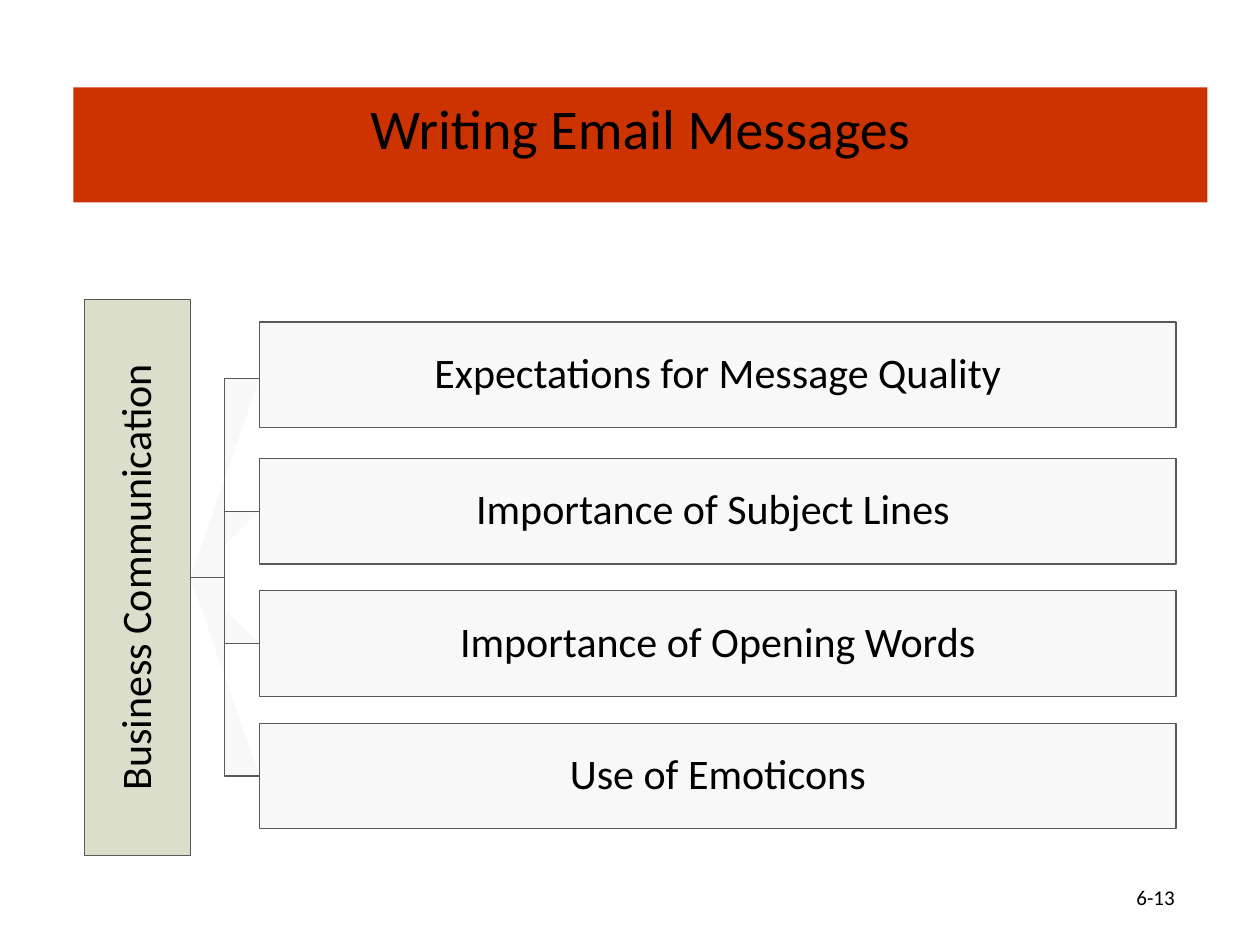
import pptx
import pptx.dml.color
import pptx.enum.shapes
import pptx.enum.text
import pptx.util

Cm = pptx.util.Cm
Pt = pptx.util.Pt
RGB = pptx.dml.color.RGBColor
Align = pptx.enum.text.PP_ALIGN
Anchor = pptx.enum.text.MSO_ANCHOR

RED = RGB(0xCC, 0x33, 0x00)
SAGE = RGB(0xDC, 0xDE, 0xCC)
PALE = RGB(0xF8, 0xF8, 0xF8)
GRAY = RGB(0x59, 0x59, 0x59)
BLACK = RGB(0, 0, 0)

TOPICS = [
    "Expectations for Message Quality",
    "Importance of Subject Lines ",
    "Importance of Opening Words",
    "Use of Emoticons",
]
MID, PITCH, THICK = 11.64, 2.67, 2.13
TRUNK, BEND, EDGE = 3.84, 4.53, 5.23


class Deck:
    font = "Calibri"
    inset = Cm(0.05)

    def __init__(self):
        self.prs = pptx.Presentation()
        self.prs.slide_width = Cm(25.4)
        self.prs.slide_height = Cm(19.05)
        self.slide = self.prs.slides.add_slide(self.prs.slide_layouts[5])

    def apply(self, item, values):
        for name, value in values.items():
            setattr(item, name, value)

    def place(self, shape, left, top, width, height):
        self.apply(shape, {"left": Cm(left), "top": Cm(top),
                           "width": Cm(width), "height": Cm(height)})

    def letter(self, shape, text, size, align, **frame):
        base = {"text": text, "word_wrap": True,
                "auto_size": pptx.enum.text.MSO_AUTO_SIZE.NONE}
        self.apply(shape.text_frame, {**base, **frame})
        para = shape.text_frame.paragraphs[0]
        para.alignment = align
        font = para.runs[0].font
        self.apply(font, {"name": self.font, "size": Pt(size)})
        font.color.rgb = BLACK
        return para

    def paint(self, shape, fill):
        shape.shadow.inherit = False
        shape.fill.solid()
        shape.fill.fore_color.rgb = fill
        shape.line.color.rgb = GRAY
        shape.line.width = Pt(0.75)

    def title(self, text, *area):
        shape = self.slide.shapes.title
        self.place(shape, *area)
        shape.fill.solid()
        shape.fill.fore_color.rgb = RED
        self.letter(shape, text, 32, Align.CENTER, vertical_anchor=Anchor.TOP)

    def box(self, text, fill, *area, turn=0):
        shape = self.slide.shapes.add_shape(
            pptx.enum.shapes.MSO_SHAPE.RECTANGLE, 0, 0, 0, 0)
        self.place(shape, *area)
        shape.rotation = turn
        self.paint(shape, fill)
        sides = ("left", "right", "top", "bottom")
        para = self.letter(shape, text, 24, Align.CENTER,
                           vertical_anchor=Anchor.MIDDLE,
                           **{f"margin_{side}": self.inset for side in sides})
        para.line_spacing = 0.9

    def branch(self, points):
        start, *rest = [(Cm(x), Cm(y)) for x, y in points]
        pen = self.slide.shapes.build_freeform(*start)
        pen.add_line_segments(rest, close=False)
        self.paint(pen.convert_to_shape(), PALE)

    def label(self, text, *area):
        shape = self.slide.shapes.add_textbox(0, 0, 0, 0)
        self.place(shape, *area)
        self.letter(shape, text, 12, Align.LEFT, vertical_anchor=Anchor.MIDDLE)


def main():
    deck = Deck()
    deck.title("Writing Email Messages", 1.48, 1.76, 22.86, 2.32)

    # Branches, inner pair first
    rows = [MID + (i - 1.5) * PITCH for i in range(len(TOPICS))]
    for i in (2, 1, 3, 0):
        deck.branch([(TRUNK, MID), (BEND, MID), (BEND, rows[i]), (EDGE, rows[i])])

    # Root bar, turned to read upward
    span = 11.21
    deck.box("Business Communication", SAGE, TRUNK - (THICK + span) / 2,
             MID - THICK / 2, span, THICK, turn=270)

    # Topic boxes, the first raised a little
    for i, (text, y) in enumerate(zip(TOPICS, rows)):
        lift = 0.08 if i == 0 else 0
        deck.box(text, PALE, EDGE, y - THICK / 2 - lift, 18.48, THICK)

    # Page number
    deck.label("6-13", 22.66, 17.78, 1.7, 0.61)
    deck.prs.save("out.pptx")


if __name__ == "__main__":
    main()
